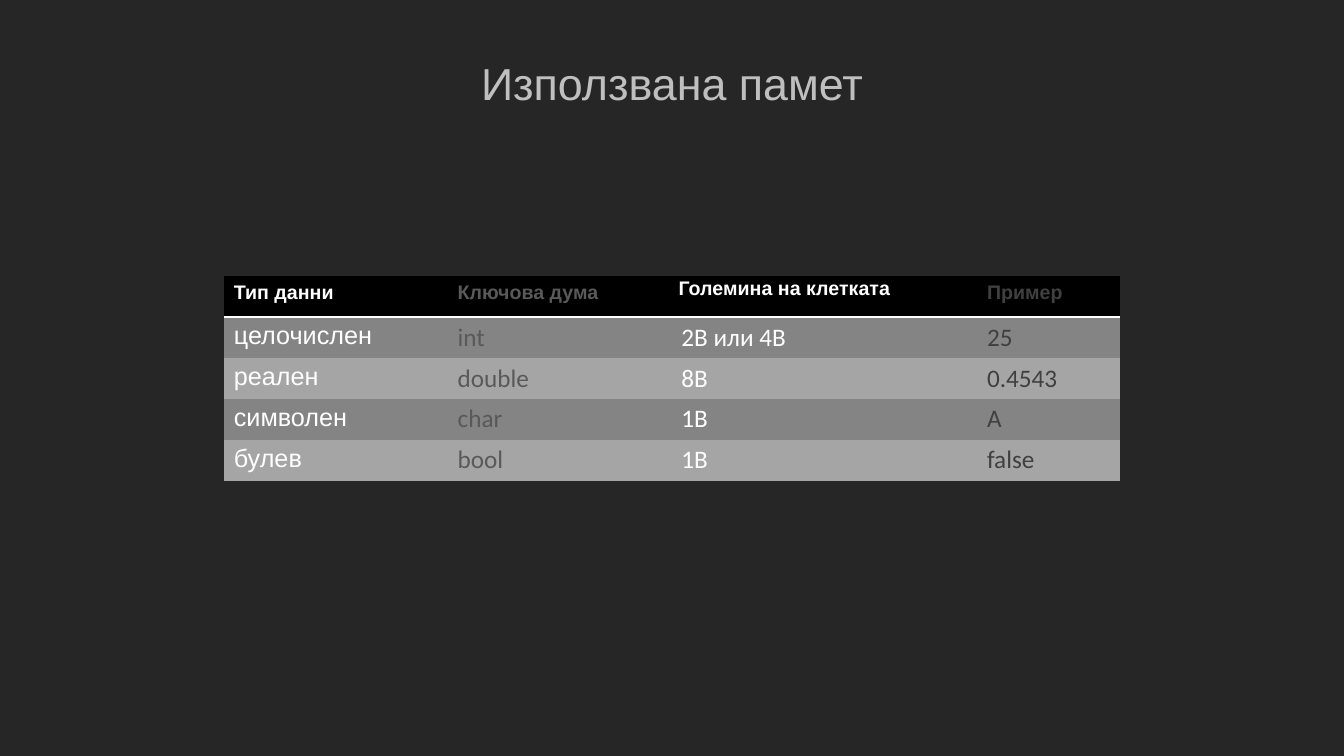
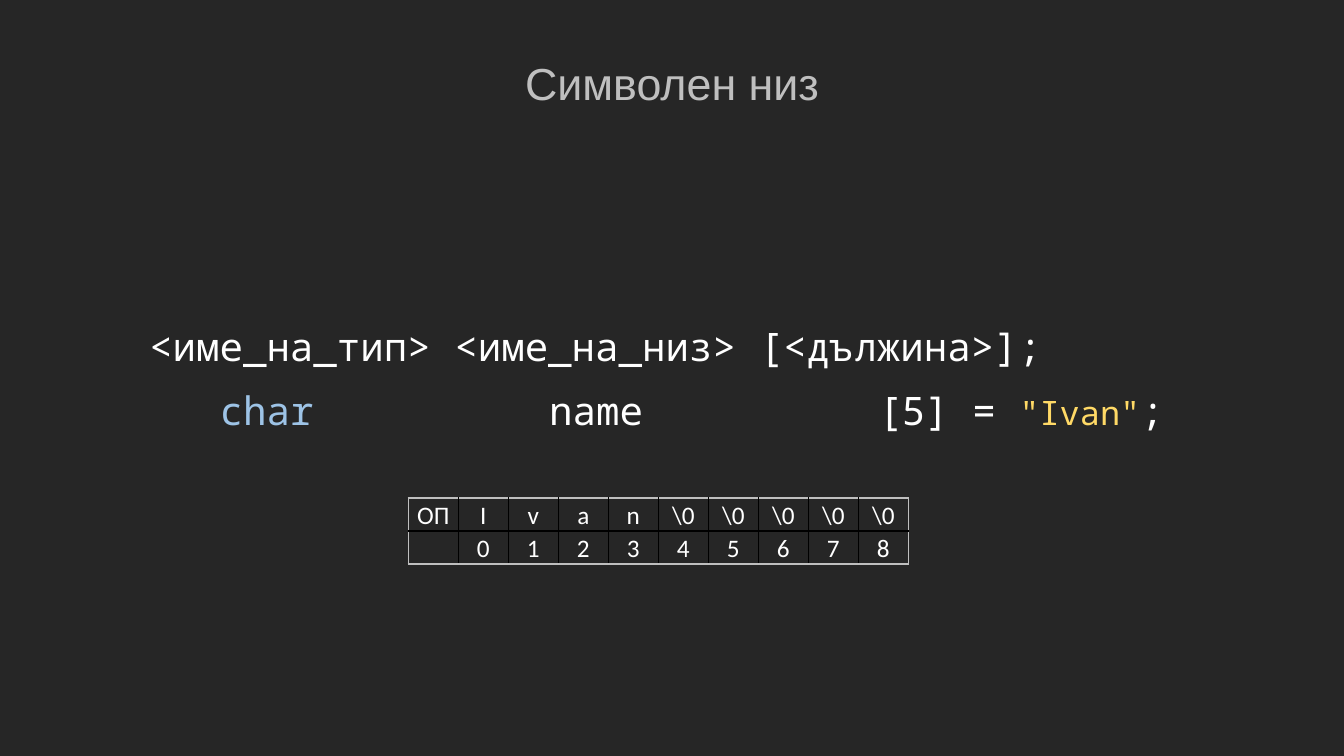
"""Builds two slides on data type memory and character strings."""
from dataclasses import dataclass

from lxml.etree import SubElement
from pptx import Presentation
from pptx.dml.color import RGBColor
from pptx.enum.text import MSO_ANCHOR, MSO_AUTO_SIZE, PP_ALIGN
from pptx.oxml.ns import qn
from pptx.util import Cm, Pt


@dataclass(frozen=True)
class Theme:
    back: str = "262626"
    title: str = "BFBFBF"
    text: str = "FFFFFF"
    keyword: str = "595959"
    sample: str = "404040"
    header: str = "000000"
    bands: tuple = ("848484", "A5A5A5")
    grid: str = "000000"
    frame: str = "BFBFBF"
    type_name: str = "9DC3E6"
    literal: str = "FFD966"
    sans: str = "Arial"
    body: str = "Calibri"
    mono: str = "Noto Sans Mono"
    title_size: int = 32
    code_size: int = 28
    literal_size: int = 24
    body_size: int = 18
    header_size: int = 14


T = Theme()
NO_STYLE = "{2D5ABB26-0587-4C30-8999-92F81FD0307C}"

MEMORY_TITLE = "Използвана памет"
MEMORY_ROWS = [
    ("Тип данни", "Ключова дума", "Големина на клетката", "Пример"),
    ("целочислен", "int", "2B или 4B", "25"),
    ("реален", "double", "8B", "0.4543"),
    ("символен", "char", "1B", "A"),
    ("булев", "bool", "1B", "false"),
]
MEMORY_WIDTHS = (5.64, 5.64, 7.7, 3.6)
MEMORY_COLORS = (T.text, T.keyword, T.text, T.sample)

STRING_TITLE = "Символен низ"
SYNTAX = [("<име_на_тип> <име_на_низ> [<дължина>];", {})]
EXAMPLE = [
    ("\tchar", {"color": T.type_name}),
    ("\tname\t[5] = ", {}),
    ('"Ivan"', {"color": T.literal, "size": T.literal_size}),
    (";", {}),
]
EXAMPLE_TABS = (1.78, 10.08, 18.38)
STRING_CELLS = list("Ivan") + ["\\0"] * 5
STRING_ROWS = [["ОП", *STRING_CELLS],
               ["", *(str(i) for i in range(len(STRING_CELLS)))]]


def add_text(p, text, font=T.body, size=T.body_size, color=T.text,
             bold=False, align=None, spacing=None):
    r = p.add_run()
    r.text = text
    r.font.name, r.font.size, r.font.bold = font, Pt(size), bold
    r.font.color.rgb = RGBColor.from_string(color)
    if align is not None:
        p.alignment = align
    if spacing is not None:
        p.line_spacing = spacing


def add_slide(prs, title):
    s = prs.slides.add_slide(prs.slide_layouts[5])
    sp = s.shapes.title
    sp.left, sp.top, sp.width, sp.height = Cm(4.24), Cm(0), Cm(25.4), Cm(2.9)
    tf = sp.text_frame
    tf.auto_size, tf.vertical_anchor = MSO_AUTO_SIZE.NONE, MSO_ANCHOR.BOTTOM
    add_text(tf.paragraphs[0], title, font=T.sans, size=T.title_size,
             color=T.title, align=PP_ALIGN.CENTER, spacing=0.9)
    return s


def add_code(s, top, runs, tabs=()):
    tf = s.shapes.add_textbox(Cm(3.51), Cm(top), Cm(26.87), Cm(1.45)).text_frame
    tf.word_wrap = True
    p = tf.paragraphs[0]
    for text, style in runs:
        add_text(p, text, **{"font": T.mono, "size": T.code_size, **style})
    if tabs:
        stops = SubElement(p._p.get_or_add_pPr(), qn("a:tabLst"))
        for pos in tabs:
            SubElement(stops, qn("a:tab"), pos=str(Cm(pos)), algn="l")


def add_table(s, rows, left, top, widths, row_height):
    shape = s.shapes.add_table(len(rows), len(widths), Cm(left), Cm(top),
                               Cm(sum(widths)), Cm(row_height * len(rows)))
    table = shape.table
    table.first_row = table.horz_banding = False
    table._tbl.tblPr.find(qn("a:tableStyleId")).text = NO_STYLE
    for column, width in zip(table.columns, widths):
        column.width = Cm(width)
    for row in table.rows:
        row.height = Cm(row_height)
    return table


def add_border(cell, side, color, width):
    ln = SubElement(cell._tc.get_or_add_tcPr(), qn(f"a:ln{side}"),
                    w=str(Pt(width)))
    SubElement(SubElement(ln, qn("a:solidFill")), qn("a:srgbClr"), val=color)


def set_tight(cell):
    cell.margin_left = cell.margin_right = Cm(0.18)
    cell.margin_top = cell.margin_bottom = Cm(0)


def build_memory(prs):
    s = add_slide(prs, MEMORY_TITLE)
    table = add_table(s, MEMORY_ROWS, 5.64, 6.96, MEMORY_WIDTHS, 1.03)
    for i, row in enumerate(MEMORY_ROWS):
        for j, text in enumerate(row):
            cell = table.cell(i, j)
            head = i == 0
            tight = head and j == 2
            if head:
                add_border(cell, "B", T.text, 2)
            if tight:
                set_tight(cell)
            cell.fill.solid()
            cell.fill.fore_color.rgb = RGBColor.from_string(
                T.header if head else T.bands[(i - 1) % 2])
            add_text(cell.text_frame.paragraphs[0], text,
                     font=T.sans if head or j == 0 else T.body,
                     size=T.header_size if head else T.body_size,
                     color=MEMORY_COLORS[j], bold=head,
                     spacing=1.07 if tight else None)


def build_string(prs):
    s = add_slide(prs, STRING_TITLE)
    add_code(s, 8, SYNTAX)
    add_code(s, 9.6, EXAMPLE, EXAMPLE_TABS)
    cols = len(STRING_ROWS[0])
    table = add_table(s, STRING_ROWS, 10.29, 12.55, [1.26] * cols, 0.83)
    for i, row in enumerate(STRING_ROWS):
        for j, text in enumerate(row):
            cell = table.cell(i, j)
            edges = {"L": j == 0, "R": j == cols - 1,
                     "T": i == 0, "B": i == len(STRING_ROWS) - 1}
            for side, outer in edges.items():
                add_border(cell, side, T.frame if outer else T.grid, 1)
            set_tight(cell)
            cell.fill.background()
            if text:
                add_text(cell.text_frame.paragraphs[0], text,
                         align=PP_ALIGN.CENTER, spacing=1.07)


def main():
    prs = Presentation()
    prs.slide_width, prs.slide_height = Cm(33.87), Cm(19.05)
    fill = prs.slide_master.background.fill
    fill.solid()
    fill.fore_color.rgb = RGBColor.from_string(T.back)
    build_memory(prs)
    build_string(prs)
    prs.save("out.pptx")


if __name__ == "__main__":
    main()
